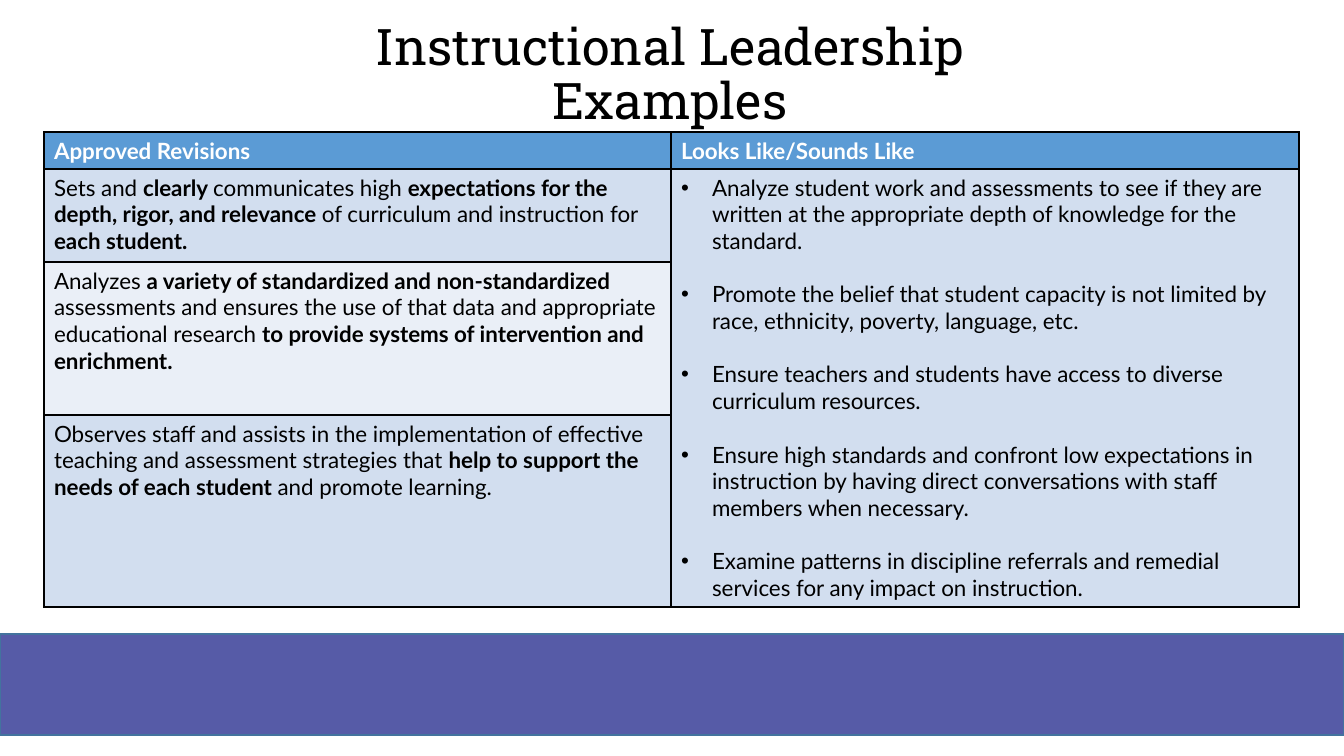
from dataclasses import dataclass

from lxml.etree import SubElement as sub
from pptx import Presentation
from pptx.dml.color import RGBColor as Color
from pptx.enum.shapes import MSO_SHAPE as Shape
from pptx.enum.text import MSO_ANCHOR as Anchor, MSO_AUTO_SIZE as Auto, PP_ALIGN as Align
from pptx.oxml.ns import qn
from pptx.util import Emu, Pt

SCALE = 914400 / 100.8
BLACK = Color(0x00, 0x00, 0x00)
WHITE = Color(0xFF, 0xFF, 0xFF)
BLUE = Color(0x5B, 0x9B, 0xD5)
PALE = Color(0xD2, 0xDE, 0xEF)
LIGHT = Color(0xEA, 0xEF, 0xF7)
PURPLE = Color(0x56, 0x5B, 0xA7)
EDGE = Color(0x43, 0x73, 0x9E)
HEAD_FONT = "Roboto Slab"
BODY_FONT = "Lato"
HANG = 31


@dataclass
class Run:
    text: str
    bold: bool = False


@dataclass
class Block:
    row: int
    col: int
    paras: list[list[Run]]
    tint: Color = BLACK
    dots: bool = False


WIDTHS = [627, 628]
HEIGHTS = [37, 93, 153, 192]
FILLS = [BLUE, PALE, LIGHT, PALE]

BLOCKS = [
    Block(0, 0, [[Run("Approved Revisions", True)]], WHITE),
    Block(0, 1, [[Run("Looks Like/Sounds Like", True)]], WHITE),
    Block(1, 0, [[
        Run("Sets and "),
        Run("clearly ", True),
        Run("communicates high "),
        Run("expectations for the depth, rigor, and relevance ", True),
        Run("of curriculum and instruction for "),
        Run("each student.", True),
    ]]),
    Block(2, 0, [[
        Run("Analyzes "),
        Run("a variety of standardized and non-standardized ", True),
        Run("assessments and ensures the use of that data and appropriate educational research "),
        Run("to provide systems of intervention and enrichment.", True),
    ]]),
    Block(3, 0, [[
        Run("Observes staff and assists in the implementation of effective teaching "
            "and assessment strategies that "),
        Run("help to support the needs of each student ", True),
        Run("and promote learning."),
    ]]),
    Block(1, 1, [
        [Run("Analyze student work and assessments to see if they are written at the "
             "appropriate depth of knowledge for the standard.")],
        [Run("Promote the belief that student capacity is not limited by race, "
             "ethnicity, poverty, language, etc.")],
        [Run("Ensure teachers and students have access to diverse curriculum resources.")],
        [Run("Ensure high standards and confront low expectations in instruction by "
             "having direct conversations with staff members when necessary.")],
        [Run("Examine patterns in discipline referrals and remedial services for any "
             "impact on instruction.")],
    ], dots=True),
]


def px(size: int) -> Emu:
    return Emu(round(size * SCALE))


def add_run(para, run: Run, face: str, size: int, tint: Color) -> None:
    part = para.add_run()
    part.text = run.text
    font = part.font
    font.name, font.size, font.bold = face, Pt(size), run.bold
    font.color.rgb = tint


def add_dot(para) -> None:
    props = para._p.get_or_add_pPr()
    props.set("marL", str(px(HANG)))
    props.set("indent", str(px(-HANG)))
    sub(props, qn("a:buFont"), typeface="Arial")
    sub(props, qn("a:buChar"), char="•")


def frame_cell(cell, fill: Color) -> None:
    props = cell._tc.get_or_add_tcPr()
    for side in ("lnL", "lnR", "lnT", "lnB"):
        line = sub(props, qn(f"a:{side}"), w=str(Pt(1)))
        solid = sub(line, qn("a:solidFill"))
        sub(solid, qn("a:srgbClr"), val=str(BLACK))
    cell.fill.solid()
    cell.fill.fore_color.rgb = fill


def fill_cell(cell, block: Block) -> None:
    frame = cell.text_frame
    for spot, runs in enumerate(block.paras):
        para = frame.add_paragraph() if spot else frame.paragraphs[0]
        if block.dots:
            add_dot(para)
        if spot:
            para.space_before = Pt(19)
        for run in runs:
            add_run(para, run, BODY_FONT, 16, block.tint)


def add_bar(slide) -> None:
    bar = slide.shapes.add_shape(Shape.RECTANGLE, px(0), px(634), px(1344), px(101))
    bar.shadow.inherit = False
    bar.fill.solid()
    bar.fill.fore_color.rgb = PURPLE
    bar.line.color.rgb = EDGE
    bar.line.width = Pt(1)


def add_title(slide) -> None:
    title = slide.shapes.title
    title.left, title.top, title.width, title.height = px(65), px(20), px(1210), px(112)
    frame = title.text_frame
    frame.word_wrap = True
    frame.auto_size = Auto.NONE
    frame.vertical_anchor = Anchor.MIDDLE
    para = frame.paragraphs[0]
    para.alignment = Align.CENTER
    para.line_spacing = 0.9
    add_run(para, Run("Instructional Leadership"), HEAD_FONT, 36, BLACK)
    para.add_line_break()
    add_run(para, Run("Examples"), HEAD_FONT, 36, BLACK)


def add_grid(slide) -> None:
    grid = slide.shapes.add_table(
        len(HEIGHTS), len(WIDTHS), px(44), px(132), px(sum(WIDTHS)), px(sum(HEIGHTS))
    ).table
    grid.horz_banding = False
    for col, width in zip(grid.columns, WIDTHS):
        col.width = px(width)
    for row, height, fill in zip(grid.rows, HEIGHTS, FILLS):
        row.height = px(height)
        for cell in row.cells:
            frame_cell(cell, fill)
    grid.cell(1, 1).merge(grid.cell(3, 1))
    for block in BLOCKS:
        fill_cell(grid.cell(block.row, block.col), block)


def main() -> None:
    deck = Presentation()
    deck.slide_width, deck.slide_height = px(1344), px(756)
    slide = deck.slides.add_slide(deck.slide_layouts[5])
    add_bar(slide)
    add_title(slide)
    add_grid(slide)
    deck.save("out.pptx")


if __name__ == "__main__":
    main()
